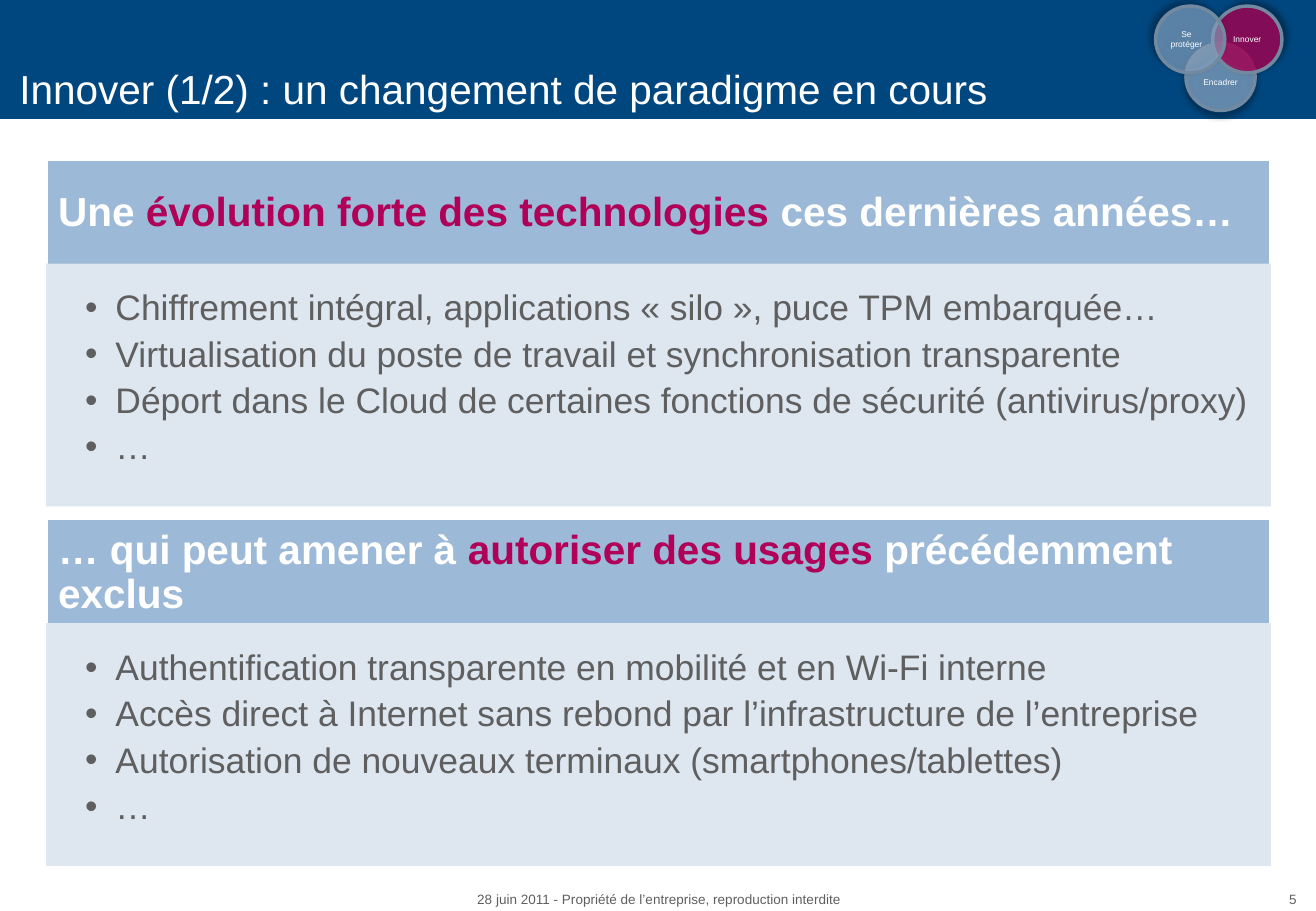
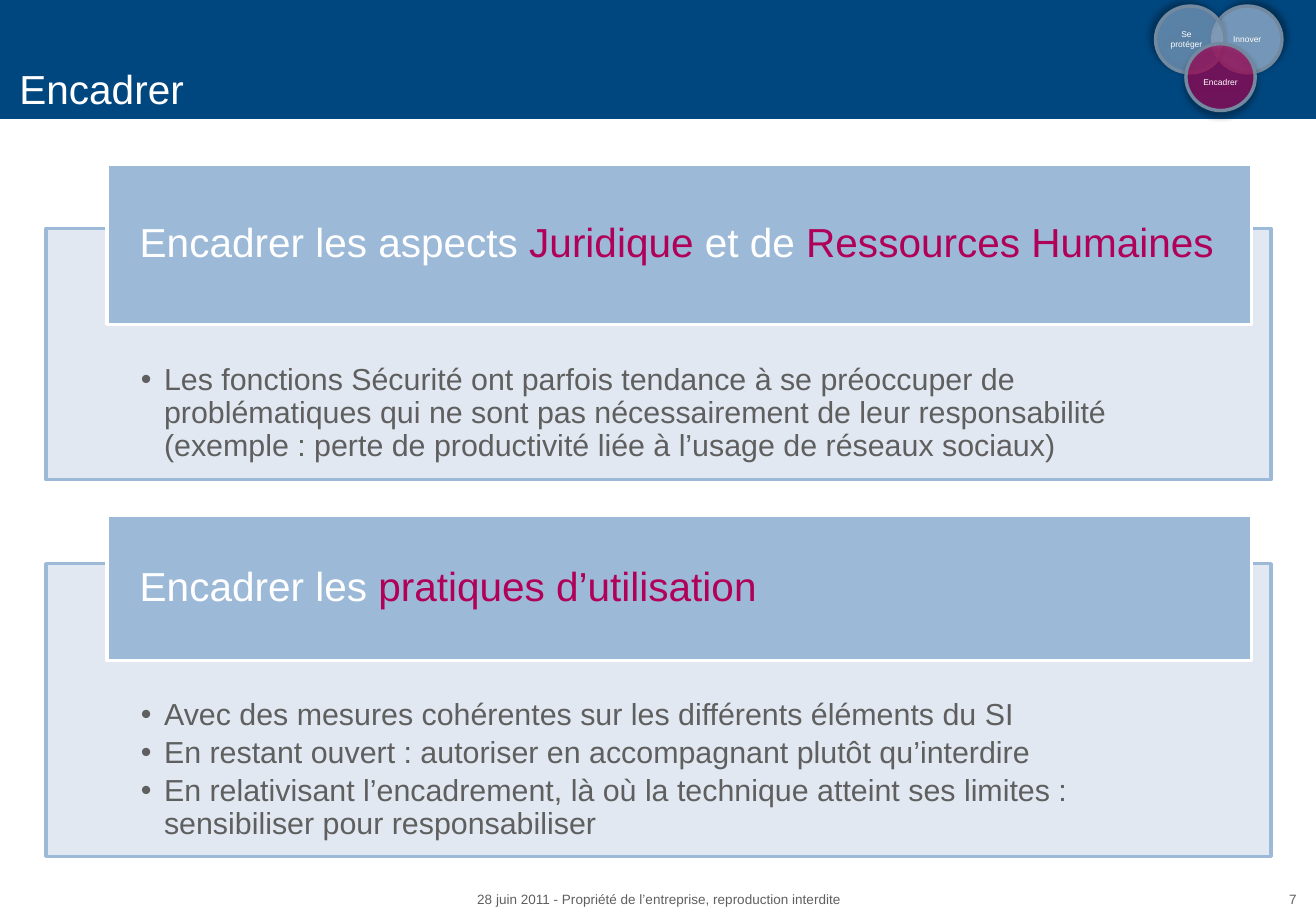
from dataclasses import dataclass

from lxml.etree import SubElement as Sub
from pptx import Presentation
from pptx.enum.shapes import MSO_SHAPE as Kind
from pptx.enum.text import MSO_ANCHOR as Anchor, MSO_AUTO_SIZE as Fit, PP_ALIGN as Align
from pptx.dml.color import RGBColor as Rgb
from pptx.oxml.ns import qn
from pptx.util import Inches, Pt

NAVY, BLUE, PALE, ROSE = "00477F", "9CB9D8", "DEE6F0", "B00058"
WHITE, GREY, RIM, BLACK = "FFFFFF", "5F5F5F", "7389A0", "000000"
FONT = "Arial"
WIDE = 10.83
BAND = (-0.01, -0.03, 10.85, 1.01)
TITLE = (0, -0.03, 10.85, 1.01)
FOOT = (0, 7.29, 10.85, 0.21)
PAGE = (10.14, 7.29, 0.63, 0.22)
LEFT, SPAN = 0.38, 10.08
NOTE = "28 juin 2011 - Propriété de l’entreprise, reproduction interdite"


@dataclass
class Ring:
    """A circle of the corner emblem."""
    x: float
    y: float
    alpha: int
    angle: int
    inset: tuple


@dataclass
class Look:
    """The style that the panels of a slide share."""
    x: float
    width: float
    pad: tuple
    bold: bool
    size: int
    inset: tuple
    indent: float
    gap: float
    alpha: int
    edge: str | None
    over: bool


@dataclass
class Panel:
    """A heading bar with its list box; bars mark accents in the heading."""
    head: str
    items: list
    top: float
    high: float
    y: float
    depth: float


@dataclass
class Page:
    """The content of a slide."""
    title: str
    number: int
    rings: tuple
    active: str
    look: Look
    panels: list


RINGS = {
    "Encadrer": Ring(9.76, 0.36, 63, 90, (0, 0.08, 0, 0)),
    "Innover": Ring(9.98, 0.05, 75, 315, (0, 0, 0, 0)),
    "Se protéger": Ring(9.51, 0.05, 58, 225, (0, 0, 0.06, 0)),
}

STACK = Look(LEFT, SPAN, (0.1,) * 4, True, 21, (0.32, 0.22, 0.08, 0.01),
             0.25, 4.8, 100, None, False)
TAB = Look(0.88, 9.42, (0.27, 0, 0.27, 0), False, 18, (0.78, 1.12, 0.78, 0.14),
           0.19, 3.1, 90, BLUE, True)

PAGES = [
    Page("Innover (1/2) : un changement de paradigme en cours", 5,
         ("Encadrer", "Innover", "Se protéger"), "Innover", STACK, [
             Panel("Une |évolution forte des technologies |ces dernières années…",
                   ["Chiffrement intégral, applications « silo », puce TPM embarquée…",
                    "Virtualisation du poste de travail et synchronisation transparente",
                    "Déport dans le Cloud de certaines fonctions de sécurité (antivirus/proxy)",
                    "…"], 1.31, 0.9, 2.17, 2),
             Panel("… qui peut amener à |autoriser des usages |précédemment exclus",
                   ["Authentification transparente en mobilité et en Wi-Fi interne",
                    "Accès direct à Internet sans rebond par l’infrastructure de l’entreprise",
                    "Autorisation de nouveaux terminaux (smartphones/tablettes)",
                    "…"], 4.27, 0.9, 5.13, 2)]),
    Page("Encadrer", 7,
         ("Innover", "Se protéger", "Encadrer"), "Encadrer", TAB, [
             Panel("Encadrer les aspects |Juridique| et de |Ressources Humaines",
                   ["Les fonctions Sécurité ont parfois tendance à se préoccuper de "
                    "problématiques qui ne sont pas nécessairement de leur responsabilité "
                    "(exemple : perte de productivité liée à l’usage de réseaux sociaux)"],
                   1.35, 1.32, 1.88, 2.07),
             Panel("Encadrer les |pratiques d’utilisation",
                   ["Avec des mesures cohérentes sur les différents éléments du SI",
                    "En restant ouvert : autoriser en accompagnant plutôt qu’interdire",
                    "En relativisant l’encadrement, là où la technique atteint ses limites : "
                    "sensibiliser pour responsabiliser"],
                   4.24, 1.2, 4.64, 2.41)]),
]


def hue(fill, color: str, alpha: int = 100) -> None:
    """Fill with a hex colour at an opacity in percent."""
    fill.solid()
    fill.fore_color.rgb = Rgb.from_string(color)
    if alpha < 100:
        node = fill._xPr.find(qn("a:solidFill"))[0]
        Sub(node, qn("a:alpha"), val=str(alpha * 1000))


def paint(shape, color: str, line: str | None = None, alpha: int = 100) -> None:
    """Set the fill and outline of a shape and drop its shadow."""
    shape.shadow.inherit = False
    hue(shape.fill, color, alpha)
    if line:
        hue(shape.line.fill, line)
        shape.line.width = Pt(2)
    else:
        shape.line.fill.background()


def place(shape, box: tuple) -> None:
    """Move a placeholder to a box and bring it to the front."""
    shape.left, shape.top, shape.width, shape.height = map(Inches, box)
    shape.element.getparent().append(shape.element)


def write(shape, *lines: str, size: float, color: str = WHITE, bold: bool = False,
          align=Align.LEFT, anchor=Anchor.TOP, inset: tuple = (0.1, 0.05, 0.1, 0.05),
          lead: float = 1, gap: float = 0, indent: float = 0) -> None:
    """Write one paragraph a line, with accents between bars."""
    frame = shape.text_frame
    frame.word_wrap, frame.auto_size, frame.vertical_anchor = True, Fit.NONE, anchor
    (frame.margin_left, frame.margin_top,
     frame.margin_right, frame.margin_bottom) = map(Inches, inset)
    for i, line in enumerate(lines):
        para = frame.add_paragraph() if i else frame.paragraphs[0]
        para.alignment, para.line_spacing = align, lead
        para.space_before, para.space_after = Pt(0), Pt(gap)
        if indent:
            props = para._p.get_or_add_pPr()
            props.set("marL", str(Inches(indent)))
            props.set("indent", str(-Inches(indent)))
        for j, part in enumerate(line.split("|")):
            run = para.add_run()
            run.text = part
            run.font.name, run.font.size, run.font.bold = FONT, Pt(size), bold
            hue(run.font.fill, ROSE if j % 2 else color)


def block(slide, kind, box: tuple, color: str, line: str | None = None, alpha: int = 100):
    """Add a painted preset shape."""
    shape = slide.shapes.add_shape(kind, *map(Inches, box))
    paint(shape, color, line, alpha)
    return shape


def label(slide, box: tuple, text: str, align) -> None:
    """Add a small footer text."""
    shape = slide.shapes.add_textbox(*map(Inches, box))
    write(shape, text, size=8, color=GREY, align=align)


def frame(slide, page: Page) -> None:
    """Draw the title band and the footer."""
    block(slide, Kind.RECTANGLE, BAND, NAVY)
    title = slide.shapes.title
    place(title, TITLE)
    write(title, page.title, size=24, anchor=Anchor.BOTTOM, inset=(0.16, 0.08, 0.1, 0.05))
    label(slide, FOOT, NOTE, Align.CENTER)
    label(slide, PAGE, str(page.number), Align.RIGHT)


def emblem(slide, page: Page) -> None:
    """Draw the three circles and colour the active one."""
    for name in page.rings:
        ring = RINGS[name]
        shape = block(slide, Kind.OVAL, (ring.x, ring.y, 0.57, 0.55),
                      ROSE if name == page.active else BLUE, RIM, ring.alpha)
        glow = Sub(shape.element.spPr.find(qn("a:effectLst")), qn("a:outerShdw"),
                   blurRad=str(Pt(4)), dist=str(Pt(3)), dir=str(ring.angle * 60000),
                   algn="ctr", rotWithShape="0")
        tone = Sub(glow, qn("a:srgbClr"), val=BLACK)
        Sub(tone, qn("a:alpha"), val="40000")
        write(shape, name, size=5, align=Align.CENTER, anchor=Anchor.MIDDLE, inset=ring.inset)


def header(slide, panel: Panel, look: Look) -> None:
    """Draw the heading bar of a panel."""
    bar = block(slide, Kind.RECTANGLE, (look.x, panel.top, look.width, panel.high), BLUE, WHITE)
    write(bar, panel.head, size=24, bold=look.bold, anchor=Anchor.MIDDLE,
          inset=look.pad, lead=0.9)


def body(slide, panel: Panel, look: Look, holder) -> None:
    """Fill the list box of a panel."""
    place(holder, (LEFT, panel.y, SPAN, panel.depth))
    paint(holder, PALE, look.edge, look.alpha)
    write(holder, *panel.items, size=look.size, color=GREY, inset=look.inset,
          lead=0.9, gap=look.gap, indent=look.indent)


def main() -> None:
    """Build and save the deck."""
    deck = Presentation()
    deck.slide_width, deck.slide_height = Inches(WIDE), Inches(7.5)
    for page in PAGES:
        slide = deck.slides.add_slide(deck.slide_layouts.get_by_name("Two Content"))
        holders = [slide.placeholders[1], slide.placeholders[2]]
        frame(slide, page)
        emblem(slide, page)
        for panel, holder in zip(page.panels, holders):
            if page.look.over:
                body(slide, panel, page.look, holder)
                header(slide, panel, page.look)
            else:
                header(slide, panel, page.look)
                body(slide, panel, page.look, holder)
    deck.save("out.pptx")


if __name__ == "__main__":
    main()
